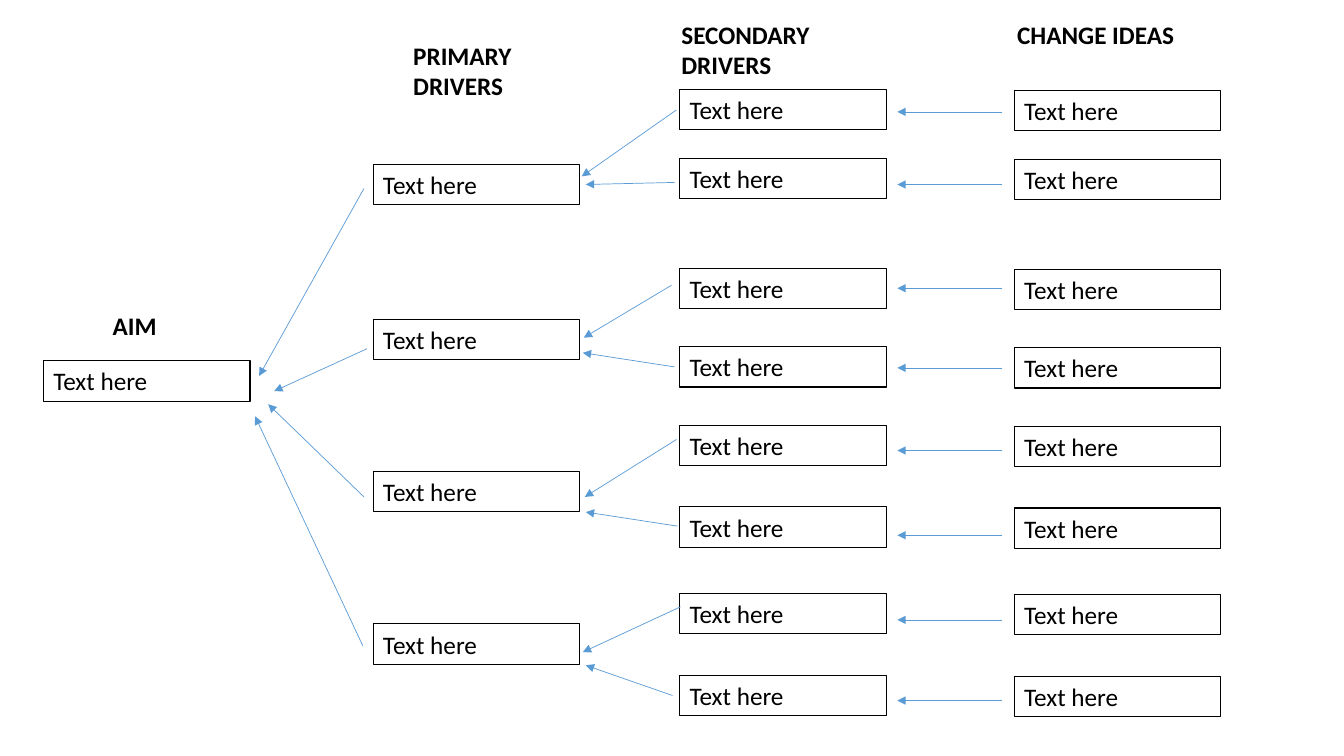
from pptx import Presentation
from pptx.dml.color import RGBColor
from pptx.enum.shapes import MSO_CONNECTOR, MSO_SHAPE
from pptx.enum.text import MSO_ANCHOR, MSO_AUTO_SIZE, PP_ALIGN
from pptx.oxml.ns import qn
from pptx.util import Inches, Pt
from lxml.etree import SubElement

BLACK = RGBColor(0x00, 0x00, 0x00)
BLUE = RGBColor(0x5B, 0x9B, 0xD5)

BOX_W, BOX_H = 2.05, 0.4
AIM_X, PRIMARY_X, SECONDARY_X, CHANGE_X = 0.43, 3.7, 6.74, 10.06
AIM_Y = 3.58
PRIMARY_Y = [1.63, 3.17, 4.68, 6.19]
SECONDARY_Y = [0.89, 1.57, 2.66, 3.44, 4.22, 5.03, 5.89, 6.7]
CHANGE_ARROW_Y = [1.11, 1.83, 2.86, 3.65, 4.47, 5.31, 6.15, 6.95]

HEADINGS = [
    ("AIM", 1.02, 3.03, 1.46, 0.4),
    ("PRIMARY DRIVERS", 4, 0.35, 1.46, 0.71),
    ("SECONDARY DRIVERS", 6.66, 0.14, 2.4, 0.72),
    ("CHANGE IDEAS", 9.99, 0.14, 2.4, 0.4),
]
DRIVER_ARROWS = [
    (3.61, 1.87, 2.57, 3.73),
    (3.64, 3.46, 2.72, 3.88),
    (3.61, 4.93, 2.66, 4.01),
    (3.6, 6.41, 2.53, 4.13),
    (6.71, 1.09, 5.77, 1.75),
    (6.69, 1.81, 5.81, 1.83),
    (6.66, 2.83, 5.79, 3.35),
    (6.69, 3.64, 5.78, 3.5),
    (6.71, 4.36, 5.8, 4.93),
    (6.72, 5.22, 5.81, 5.08),
    (6.75, 6.02, 5.78, 6.47),
    (6.67, 6.9, 5.81, 6.6),
]


def write(sp, text, bold=False):
    tf = sp.text_frame
    tf.word_wrap = True
    tf.auto_size = MSO_AUTO_SIZE.SHAPE_TO_FIT_TEXT
    tf.vertical_anchor = MSO_ANCHOR.TOP
    p = tf.paragraphs[0]
    p.alignment = PP_ALIGN.LEFT
    r = p.add_run()
    r.text = text
    r.font.name = "Calibri"
    r.font.size = Pt(18)
    r.font.bold = bold
    r.font.color.rgb = BLACK


def add_box(s, x, y):
    sp = s.shapes.add_shape(MSO_SHAPE.RECTANGLE, Inches(x), Inches(y),
                            Inches(BOX_W), Inches(BOX_H))
    sp.shadow.inherit = False
    sp.fill.background()
    sp.line.color.rgb = BLACK
    sp.line.width = Pt(0.75)
    write(sp, "Text here")


def add_heading(s, text, x, y, w, h):
    sp = s.shapes.add_textbox(Inches(x), Inches(y), Inches(w), Inches(h))
    write(sp, text, bold=True)


def add_arrow(s, x1, y1, x2, y2):
    c = s.shapes.add_connector(MSO_CONNECTOR.STRAIGHT, Inches(x1), Inches(y1),
                               Inches(x2), Inches(y2))
    c.line.color.rgb = BLUE
    c.line.width = Pt(0.5)
    SubElement(c.line._get_or_add_ln(), qn("a:tailEnd"), type="triangle")
    SubElement(c._element.spPr, qn("a:effectLst"))


def main():
    prs = Presentation()
    prs.slide_width = Inches(13.33)
    prs.slide_height = Inches(7.5)
    s = prs.slides.add_slide(prs.slide_layouts[6])

    add_box(s, AIM_X, AIM_Y)
    for y in PRIMARY_Y:
        add_box(s, PRIMARY_X, y)
    for y in SECONDARY_Y:
        add_box(s, SECONDARY_X, y)
        add_box(s, CHANGE_X, y + 0.01)
    for heading in HEADINGS:
        add_heading(s, *heading)
    for arrow in DRIVER_ARROWS:
        add_arrow(s, *arrow)
    for y in CHANGE_ARROW_Y:
        add_arrow(s, 9.94, y, 8.9, y)

    prs.save("out.pptx")


if __name__ == "__main__":
    main()
